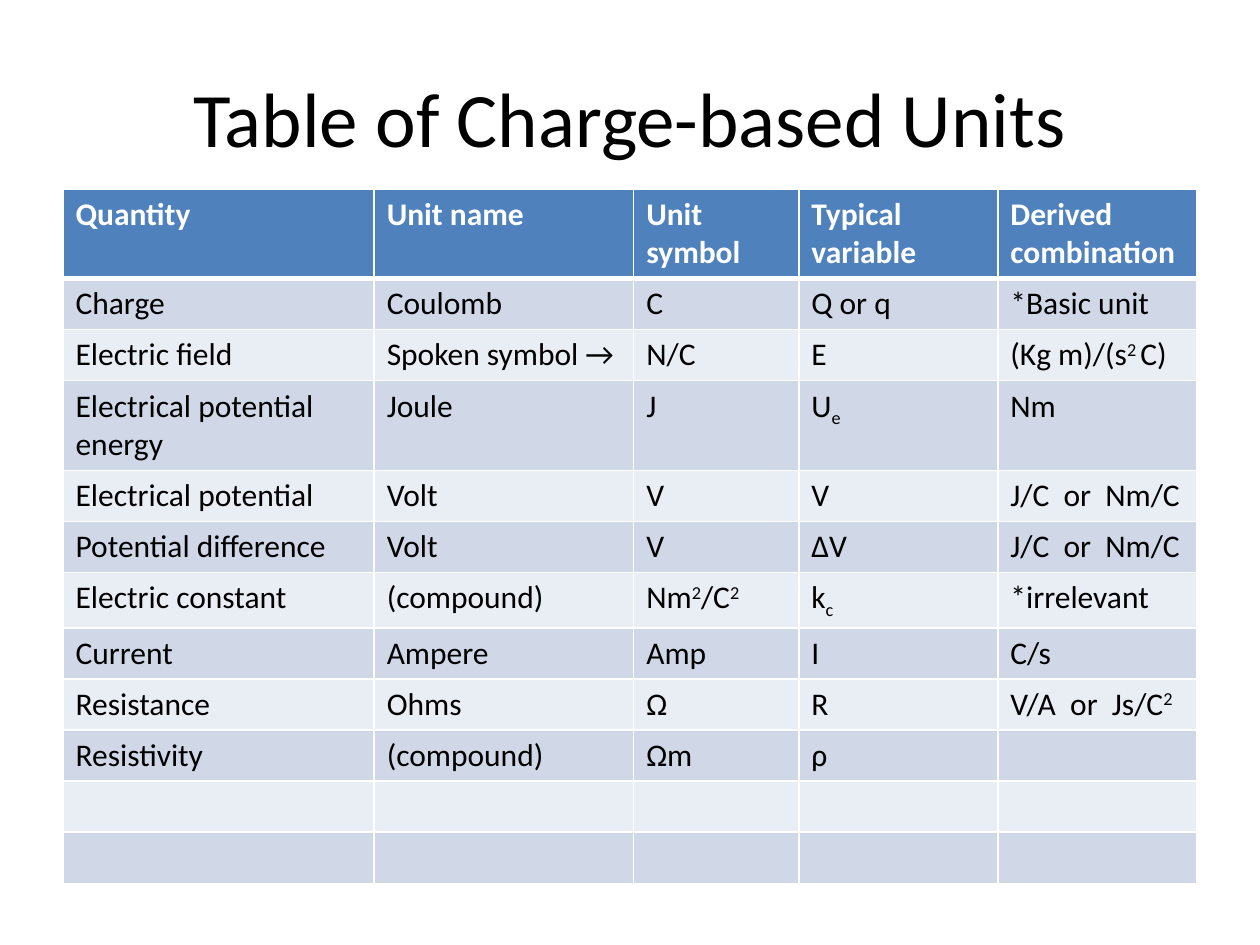
from dataclasses import dataclass

from lxml import etree
from pptx import Presentation
from pptx.dml.color import RGBColor
from pptx.enum.text import MSO_ANCHOR, PP_ALIGN
from pptx.oxml.ns import qn
from pptx.util import Pt

CENTER = PP_ALIGN.CENTER
MIDDLE = MSO_ANCHOR.MIDDLE
TITLE_ONLY = 5


@dataclass(frozen=True)
class Theme:
    font: str = "Calibri"
    title_size: int = 44
    table_size: int = 18
    ink: str = "000000"
    paper: str = "FFFFFF"
    header: str = "4F81BD"
    bands: tuple = ("D0D8E8", "E9EDF4")
    rule: float = 1
    header_rule: float = 3


THEME = Theme()
SUPER, SUB = 30000, -25000
SQUARED = ("2", SUPER)

# A cell is a string, or a list of strings and (text, baseline) pairs
UNITS = [
    ["Quantity", "Unit name", "Unit symbol", "Typical variable", "Derived combination"],
    ["Charge", "Coulomb", "C", "Q or q", "*Basic unit"],
    ["Electric field", "Spoken symbol →", "N/C", "E", ["(Kg m)/(s", ("2 ", SUPER), "C)"]],
    ["Electrical potential energy", "Joule", "J", ["U", ("e", SUB)], "Nm"],
    ["Electrical potential", "Volt", "V", "V", "J/C  or  Nm/C"],
    ["Potential difference", "Volt", "V", "ΔV", "J/C  or  Nm/C"],
    ["Electric constant", "(compound)", ["Nm", SQUARED, "/C", SQUARED],
     ["k", ("c", SUB)], "*irrelevant"],
    ["Current", "Ampere", "Amp", "I", "C/s"],
    ["Resistance", "Ohms", "Ω", "R", ["V/A  or  Js/C", SQUARED]],
    ["Resistivity", "(compound)", "Ωm", "ρ", ""],
    [""] * 5,
    [""] * 5,
]
COLUMN_WIDTHS = [177.84, 148.32, 94.32, 113.76, 113.76]
ROW_HEIGHT, LOW_ROW_HEIGHT = 29.2, 25.92
LOW_ROWS = (2, 3)


def format_font(font, size, color, bold=False):
    values = {"name": THEME.font, "size": Pt(size), "bold": bold}
    for name, value in values.items():
        setattr(font, name, value)
    font.color.rgb = RGBColor.from_string(color)


def set_borders(cell, bottom):
    """Draw the four cell edges, which come before the fill in the XML."""
    properties = cell._tc.get_or_add_tcPr()
    widths = {"a:lnL": THEME.rule, "a:lnR": THEME.rule, "a:lnT": THEME.rule, "a:lnB": bottom}
    for position, (edge, width) in enumerate(widths.items()):
        line = etree.Element(qn(edge), w=str(Pt(width)))
        fill = etree.SubElement(line, qn("a:solidFill"))
        etree.SubElement(fill, qn("a:srgbClr"), val=THEME.paper)
        properties.insert(position, line)


def write_cell(cell, content, color, bold):
    pieces = [content] if isinstance(content, str) else content
    paragraph = cell.text_frame.paragraphs[0]
    for piece in filter(None, pieces):
        text, baseline = (piece, 0) if isinstance(piece, str) else piece
        run = paragraph.add_run()
        run.text = text
        format_font(run.font, THEME.table_size, color, bold)
        if baseline:
            run._r.get_or_add_rPr().set("baseline", str(baseline))


def add_title(slide, left, top, width, height):
    title = slide.shapes.title
    box = {"left": left, "top": top, "width": width, "height": height}
    for name, value in box.items():
        setattr(title, name, Pt(value))
    title.text_frame.vertical_anchor = MIDDLE
    heading = title.text_frame.paragraphs[0]
    heading.alignment = CENTER
    run = heading.add_run()
    run.text = "Table of Charge-based Units"
    format_font(run.font, THEME.title_size, THEME.ink)


def add_units_table(slide, left, top, width):
    heights = [LOW_ROW_HEIGHT if row in LOW_ROWS else ROW_HEIGHT for row in range(len(UNITS))]
    table = slide.shapes.add_table(
        len(UNITS), len(COLUMN_WIDTHS), Pt(left), Pt(top), Pt(width), Pt(sum(heights))
    ).table
    scale = width / sum(COLUMN_WIDTHS)
    for column, column_width in zip(table.columns, COLUMN_WIDTHS):
        column.width = Pt(column_width * scale)

    for index, (row, height, contents) in enumerate(zip(table.rows, heights, UNITS)):
        row.height = Pt(height)
        is_header = index == 0
        fill = THEME.header if is_header else THEME.bands[(index - 1) % 2]
        color = THEME.paper if is_header else THEME.ink
        for cell, content in zip(row.cells, contents):
            cell.fill.solid()
            cell.fill.fore_color.rgb = RGBColor.from_string(fill)
            set_borders(cell, THEME.header_rule if is_header else THEME.rule)
            write_cell(cell, content, color, is_header)


def main():
    presentation = Presentation()
    presentation.slide_width, presentation.slide_height = Pt(720), Pt(540)
    slide = presentation.slides.add_slide(presentation.slide_layouts[TITLE_ONLY])
    add_title(slide, 36, 21.6, 648, 90)
    add_units_table(slide, 36, 108, 648)
    presentation.save("out.pptx")


if __name__ == "__main__":
    main()
